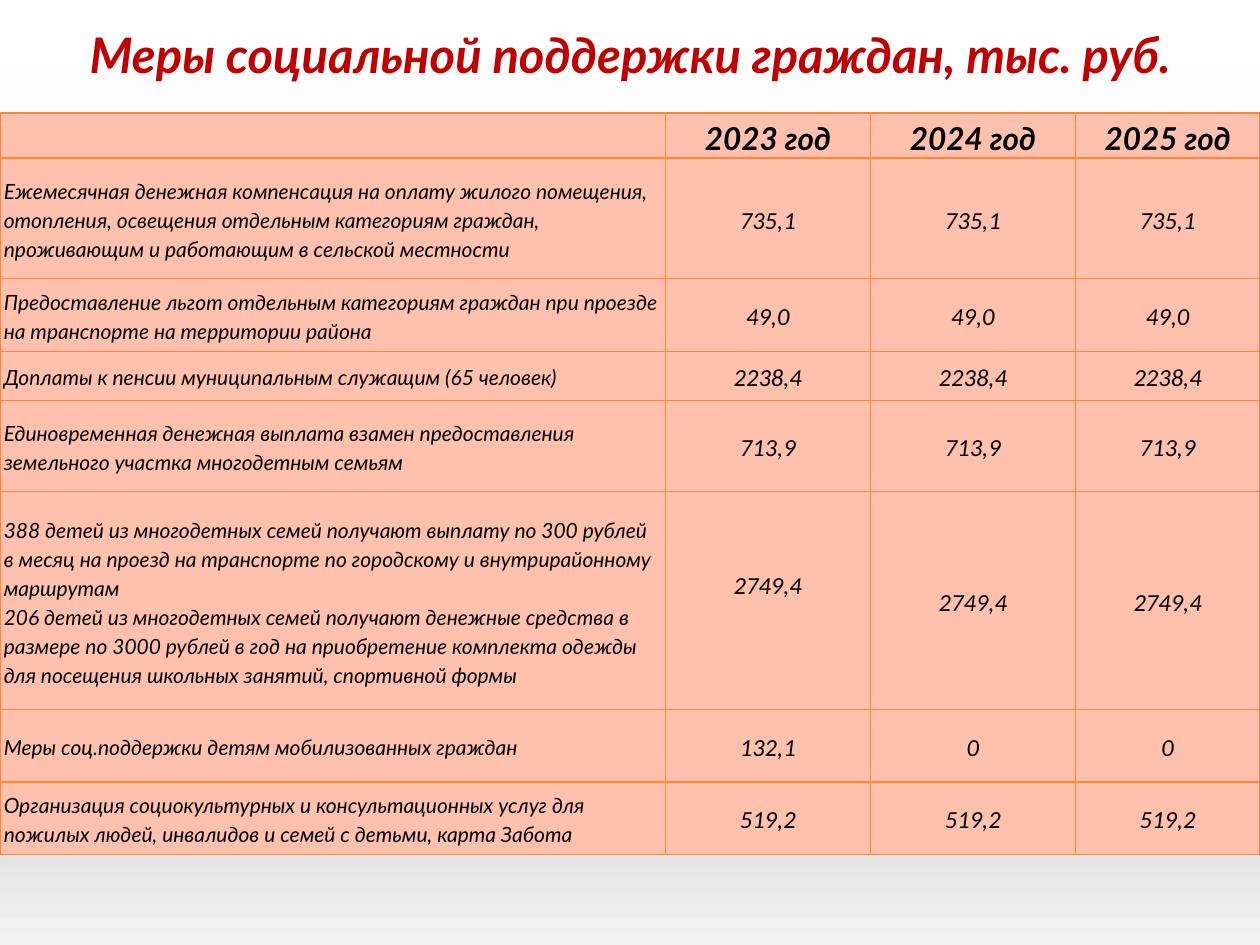
from dataclasses import dataclass

import pptx
import pptx.dml.color
import pptx.enum.text
import pptx.oxml
import pptx.oxml.ns
import pptx.util

Pt = pptx.util.Pt
ALIGN = pptx.enum.text.PP_ALIGN
MIDDLE = pptx.enum.text.MSO_ANCHOR.MIDDLE

CELL_FILL = "FFC1AD"
BORDER = "FE8637"
BACKGROUND_STOPS = [(0, "FFFFFF"), (53, "EFF1F7"), (83, "D9D9D9"), (100, "F2F2F2")]
COLUMN_WIDTHS = [380.2, 117.2, 117.2, 105.4]
CELL_FORMAT = {
    "vertical_anchor": MIDDLE,
    "margin_left": Pt(2.2),
    "margin_right": Pt(2.2),
    "margin_top": 0,
    "margin_bottom": 0,
}


@dataclass
class TextStyle:
    font_name: str
    size: float
    bold: bool = False
    color: str = "000000"
    alignment: ALIGN = ALIGN.CENTER
    line_spacing: float = 1.15


@dataclass
class SupportRow:
    height: float
    label: str
    values: list[str]
    first_value_lift: float = 0


TITLE = TextStyle("Lato", 28, bold=True, color="C00000", line_spacing=1)
HEADING = TextStyle("Lato", 18, bold=True)
LABEL = TextStyle("Lato", 12, alignment=ALIGN.LEFT)
VALUE = TextStyle("Calibri", 14)

ROWS = [
    SupportRow(25.7, "", ["2023 год", "2024 год", "2025 год"]),
    SupportRow(69.1, "Ежемесячная денежная компенсация на оплату жилого помещения, отопления, "
               "освещения отдельным категориям граждан, проживающим и работающим в сельской "
               "местности", ["735,1"] * 3),
    SupportRow(41.5, "Предоставление льгот отдельным категориям граждан при проезде на "
               "транспорте на территории района", ["49,0"] * 3),
    SupportRow(27.9, "Доплаты к пенсии муниципальным служащим (65 человек)", ["2238,4"] * 3),
    SupportRow(52.3, "Единовременная денежная выплата взамен предоставления земельного участка "
               "многодетным семьям", ["713,9"] * 3),
    SupportRow(124.3, "388 детей из многодетных семей получают выплату по 300 рублей в месяц на "
               "проезд на транспорте по городскому и внутрирайонному маршрутам\n"
               "206 детей из многодетных семей получают денежные средства в размере по 3000 "
               "рублей в год на приобретение комплекта одежды для посещения школьных занятий, "
               "спортивной формы", ["2749,4"] * 3, first_value_lift=19.4),
    SupportRow(41.5, "Меры соц.поддержки детям мобилизованных граждан", ["132,1", "0", "0"]),
    SupportRow(41.5, "Организация социокультурных и консультационных услуг для пожилых людей, "
               "инвалидов и семей с детьми, карта Забота", ["519,2"] * 3),
]


def set_attributes(target: object, values: dict) -> None:
    for name, value in values.items():
        setattr(target, name, value)


def rgb(color: str) -> pptx.dml.color.RGBColor:
    return pptx.dml.color.RGBColor.from_string(color)


def write_text(text_frame, text: str, style: TextStyle) -> None:
    text_frame.text = text
    for paragraph in text_frame.paragraphs:
        set_attributes(paragraph, {"alignment": style.alignment,
                                   "line_spacing": style.line_spacing})
        for run in paragraph.runs:
            set_attributes(run.font, {"name": style.font_name, "size": Pt(style.size),
                                      "bold": style.bold, "italic": True})
            run.font.color.rgb = rgb(style.color)


def parse_drawing(tag: str, attributes: str, content: str):
    """Build one DrawingML element."""
    namespace = pptx.oxml.ns.nsdecls("a")
    return pptx.oxml.parse_xml(f"<a:{tag} {namespace} {attributes}>{content}</a:{tag}>")


def paint_background(slide) -> None:
    fill = slide.background.fill
    fill.gradient()
    fill.gradient_angle = 270
    stop_list = slide.element.xpath(".//p:bg//a:gsLst")[0]
    for stop in list(stop_list):
        stop_list.remove(stop)
    for percent, color in BACKGROUND_STOPS:
        stop_list.append(parse_drawing("gs", f'pos="{percent * 1000}"',
                                       f'<a:srgbClr val="{color}"/>'))


def style_cell(cell) -> None:
    set_attributes(cell, CELL_FORMAT)
    properties = cell._tc.get_or_add_tcPr()
    for side in ("lnL", "lnR", "lnT", "lnB"):
        properties.append(parse_drawing(
            side, f'w="{int(Pt(0.75))}"',
            f'<a:solidFill><a:srgbClr val="{BORDER}"/></a:solidFill>'))
    cell.fill.solid()
    cell.fill.fore_color.rgb = rgb(CELL_FILL)


def add_title(slide, text: str) -> None:
    box = slide.shapes.add_textbox(0, 0, Pt(720), Pt(62))
    set_attributes(box.text_frame, {"word_wrap": True, "vertical_anchor": MIDDLE})
    write_text(box.text_frame, text, TITLE)


def add_support_table(slide, rows: list[SupportRow]) -> None:
    height = sum(row.height for row in rows)
    table = slide.shapes.add_table(len(rows), len(COLUMN_WIDTHS), 0, Pt(64.6),
                                   Pt(720), Pt(height)).table
    for column, width in zip(table.columns, COLUMN_WIDTHS):
        column.width = Pt(width)
    for row_index, row in enumerate(rows):
        table.rows[row_index].height = Pt(row.height)
        value_style = VALUE if row_index else HEADING
        for column_index, text in enumerate([row.label, *row.values]):
            cell = table.cell(row_index, column_index)
            style_cell(cell)
            write_text(cell.text_frame, text, value_style if column_index else LABEL)
        table.cell(row_index, 1).margin_bottom = Pt(row.first_value_lift)


def main() -> None:
    presentation = pptx.Presentation()
    set_attributes(presentation, {"slide_width": Pt(720), "slide_height": Pt(540)})
    slide = presentation.slides.add_slide(presentation.slide_layouts[6])
    paint_background(slide)
    add_title(slide, "Меры социальной поддержки граждан, тыс. руб.")
    add_support_table(slide, ROWS)
    presentation.save("out.pptx")


if __name__ == "__main__":
    main()
